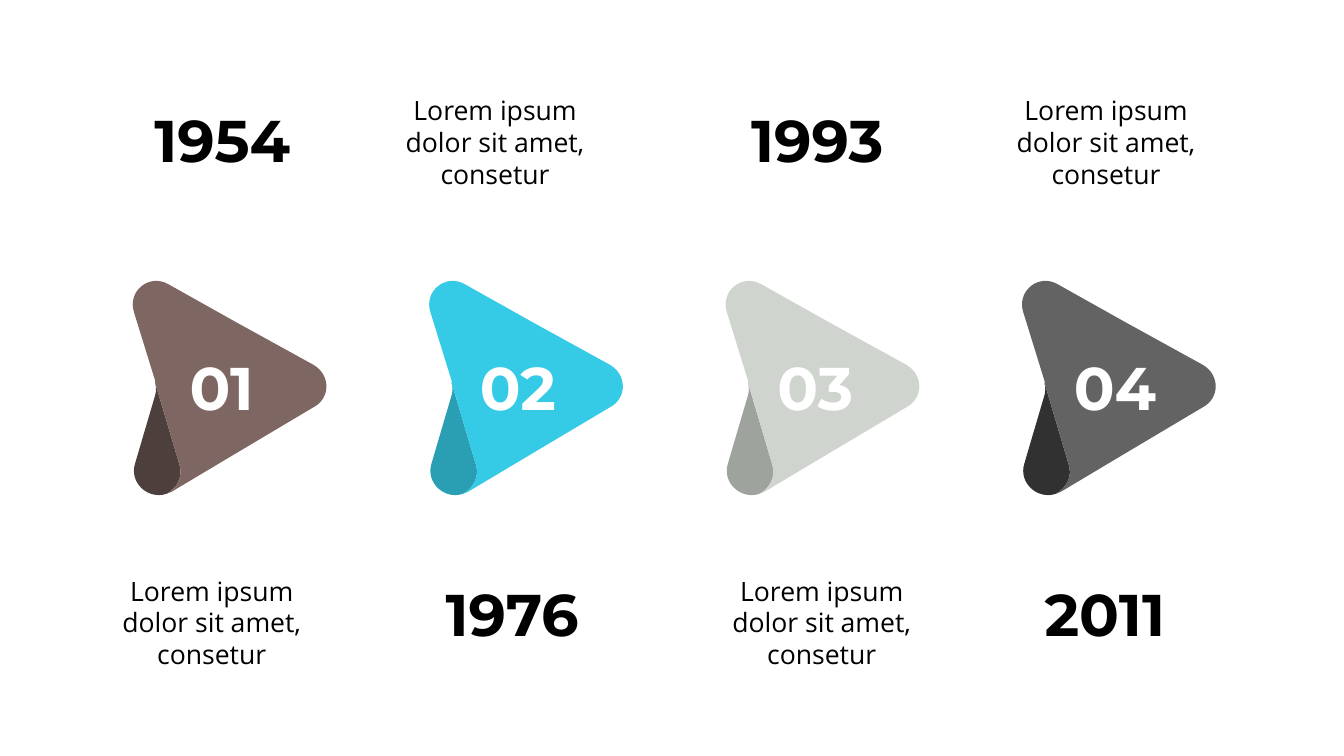
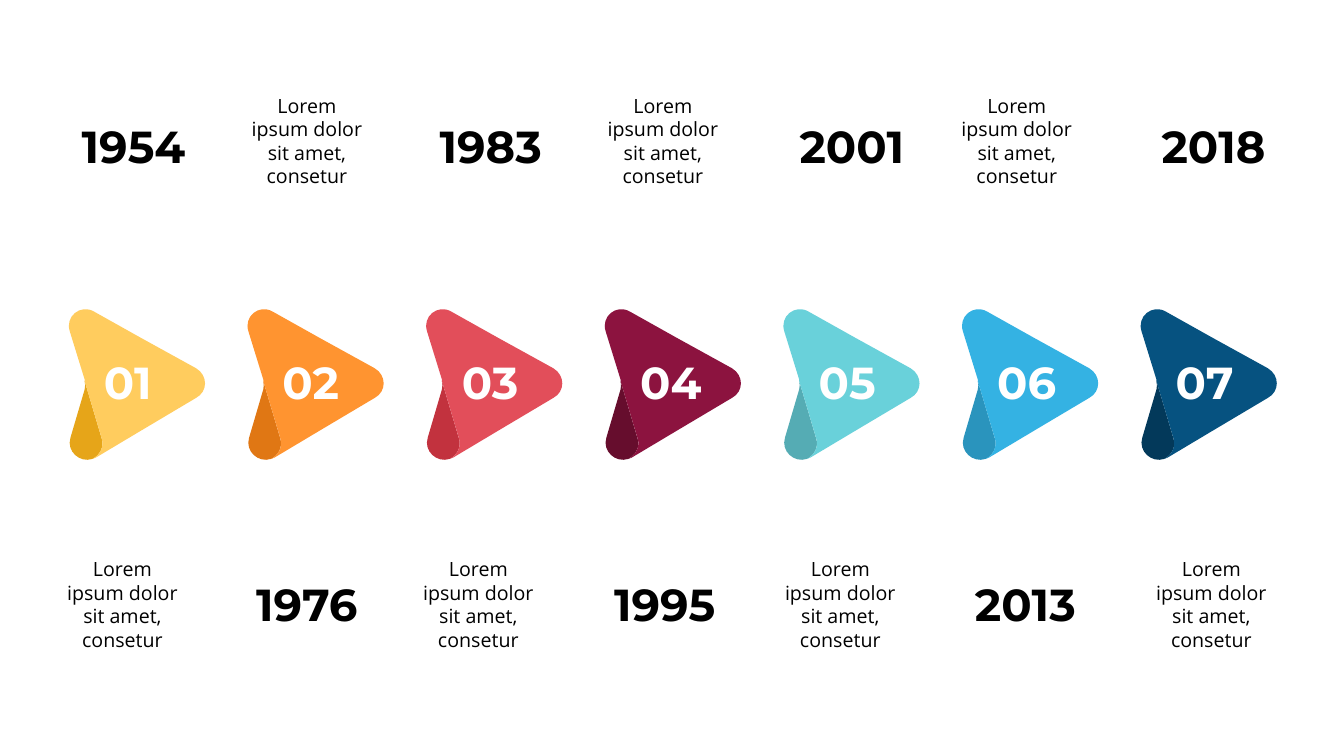
from dataclasses import dataclass

from lxml import etree
from pptx import Presentation
from pptx.dml.color import RGBColor
from pptx.enum.text import MSO_AUTO_SIZE, PP_ALIGN
from pptx.oxml.ns import qn
from pptx.util import Inches, Pt

COLOURS = {
    "black": "000000", "white": "FFFFFF",
    "brown": "7E6762", "brown fold": "4D3F3C",
    "cyan": "35CAE6", "cyan fold": "2A9FB4",
    "silver": "D0D4CE", "silver fold": "9FA39E",
    "grey": "636363", "grey fold": "313131",
    "yellow": "FFCC5E", "yellow fold": "E6A519",
    "orange": "FF9430", "orange fold": "E07714",
    "red": "E24E5A", "red fold": "C2323E",
    "wine": "8C133F", "wine fold": "660D2D",
    "teal": "69D1DA", "teal fold": "55ACB4",
    "sky": "34B2E3", "sky fold": "2A94BD",
    "navy": "065280", "navy fold": "03395A",
}
HEADING_FONT = "Montserrat"
BODY_FONT = "Open Sans"
NOTE = "Lorem ipsum dolor sit amet, consetur"

# Arrow outlines in inches from the notch at the back of the arrow.
# One point is a straight line, three points are a Bezier curve.
FOLD = [
    [(0.24, 0.81)], [(0, 0)],
    [(0.01, 0.04), (0.01, 0.08), (0, 0.12)],
    [(-0.2, 0.8)],
    [(-0.26, 0.99), (-0.07, 1.16), (0.11, 1.1)],
    [(0.21, 1.05), (0.28, 0.93), (0.24, 0.81)],
]
BODY = [
    [(0.11, 1.1)],
    [(0.13, 1.09), (0.14, 1.09), (0.16, 1.08)],
    [(0.78, 0.71)], [(1.57, 0.24)],
    [(1.74, 0.15), (1.74, -0.08), (1.57, -0.18)],
    [(0.79, -0.61)], [(0.13, -0.98)],
    [(-0.06, -1.09), (-0.28, -0.91), (-0.21, -0.7)],
    [(0, -0.02)], [(0, 0)], [(0.24, 0.81)],
    [(0.28, 0.93), (0.21, 1.05), (0.11, 1.1)],
]


@dataclass
class Layout:
    """Measures of one timeline; tops are (above, below) the arrows."""
    first_notch: float
    last_notch: float
    notch_top: float
    scale: float
    number_top: float
    number_size: int
    year_tops: tuple
    year_size: int
    note_tops: tuple
    note_size: int
    note_box: tuple


def bend(shape, parts):
    """Join each run of three line points into one Bezier curve."""
    lines = iter(list(shape.element.iter(qn("a:lnTo"))))
    for part in parts:
        segment = [next(lines) for _ in part]
        if len(segment) == 3:
            curve = etree.Element(qn("a:cubicBezTo"))
            segment[0].addprevious(curve)
            for line in segment:
                curve.append(line[0])
                line.getparent().remove(line)


class TimelineDeck:
    def __init__(self):
        self.deck = Presentation()
        self.deck.slide_width = Inches(13.33)
        self.deck.slide_height = Inches(7.5)
        self.page = None

    def new_page(self):
        self.page = self.deck.slides.add_slide(self.deck.slide_layouts[6])

    def outline(self, parts, left, top, scale, colour):
        placed = [(Inches(left + x * scale), Inches(top + y * scale))
                  for part in parts for x, y in part]
        builder = self.page.shapes.build_freeform(*placed[0])
        builder.add_line_segments(placed[1:], close=True)
        shape = builder.convert_to_shape()
        bend(shape, parts[1:])
        shape.shadow.inherit = False
        shape.fill.solid()
        shape.fill.fore_color.rgb = RGBColor.from_string(COLOURS[colour])
        shape.line.fill.background()

    def arrow(self, left, top, scale, colour):
        self.outline(FOLD, left, top, scale, colour + " fold")
        self.outline(BODY, left, top, scale, colour)

    def text(self, words, left, top, width, height, size, font, colour):
        box = self.page.shapes.add_textbox(
            Inches(left), Inches(top), Inches(width), Inches(height))
        frame = box.text_frame
        frame.auto_size = MSO_AUTO_SIZE.SHAPE_TO_FIT_TEXT
        para = frame.paragraphs[0]
        para.text = words
        para.font.name = font
        para.font.size = Pt(size)
        para.font.color.rgb = RGBColor.from_string(COLOURS[colour])
        return frame, para

    def heading(self, words, left, top, size, colour):
        width = (len(words) + 0.6) * size * 0.01
        frame, para = self.text(words, left, top, width, size * 0.021,
                                size, HEADING_FONT, colour)
        frame.word_wrap = False
        frame.margin_left = frame.margin_right = 0
        frame.margin_top = frame.margin_bottom = 0
        para.font.bold = True

    def note(self, left, top, box_size, size):
        frame, para = self.text(NOTE, left, top, *box_size,
                                size, BODY_FONT, "black")
        frame.word_wrap = True
        para.alignment = PP_ALIGN.CENTER
        para.line_spacing = Pt(size * 1.2)

    def timeline(self, layout, milestones):
        self.new_page()
        pitch = ((layout.last_notch - layout.first_notch)
                 / (len(milestones) - 1))
        for index, milestone in enumerate(milestones):
            colour, year, number_left, year_left, note_left = milestone
            # Years and notes swap sides from one arrow to the next
            side = index % 2
            self.arrow(layout.first_notch + index * pitch,
                       layout.notch_top, layout.scale, colour)
            self.heading(f"{index + 1:02d}", number_left, layout.number_top,
                         layout.number_size, "white")
            self.heading(year, year_left, layout.year_tops[side],
                         layout.year_size, "black")
            self.note(note_left, layout.note_tops[1 - side],
                      layout.note_box, layout.note_size)


def main():
    timelines = TimelineDeck()

    # Four milestones: colour, year, left of number, year and note
    timelines.timeline(
        Layout(first_notch=1.54, last_notch=10.36, notch_top=3.8, scale=1,
               number_top=3.48, number_size=43,
               year_tops=(1.03, 5.73), year_size=42,
               note_tops=(0.88, 5.65), note_size=19, note_box=(2.02, 1.06)),
        [("brown", "1954", 1.88, 1.53, 1.09),
         ("cyan", "1976", 4.76, 4.42, 3.9),
         ("silver", "1993", 7.71, 7.45, 7.14),
         ("grey", "2011", 10.65, 10.36, 9.96)])

    # Seven milestones, with arrows 1.42 instead of 2.02 wide
    timelines.timeline(
        Layout(first_notch=0.84, last_notch=11.47, notch_top=3.78,
               scale=1.42 / 2.02, number_top=3.52, number_size=32,
               year_tops=(1.18, 5.72), year_size=32,
               note_tops=(0.88, 5.48), note_size=14, note_box=(1.37, 1.04)),
        [("yellow", "1954", 1.03, 0.81, 0.53),
         ("orange", "1976", 2.8, 2.54, 2.36),
         ("red", "1983", 4.58, 4.36, 4.06),
         ("wine", "1995", 6.35, 6.09, 5.89),
         ("teal", "2001", 8.12, 7.93, 7.65),
         ("sky", "2013", 9.89, 9.67, 9.4),
         ("navy", "2018", 11.66, 11.52, 11.33)])

    timelines.deck.save("out.pptx")


if __name__ == "__main__":
    main()
